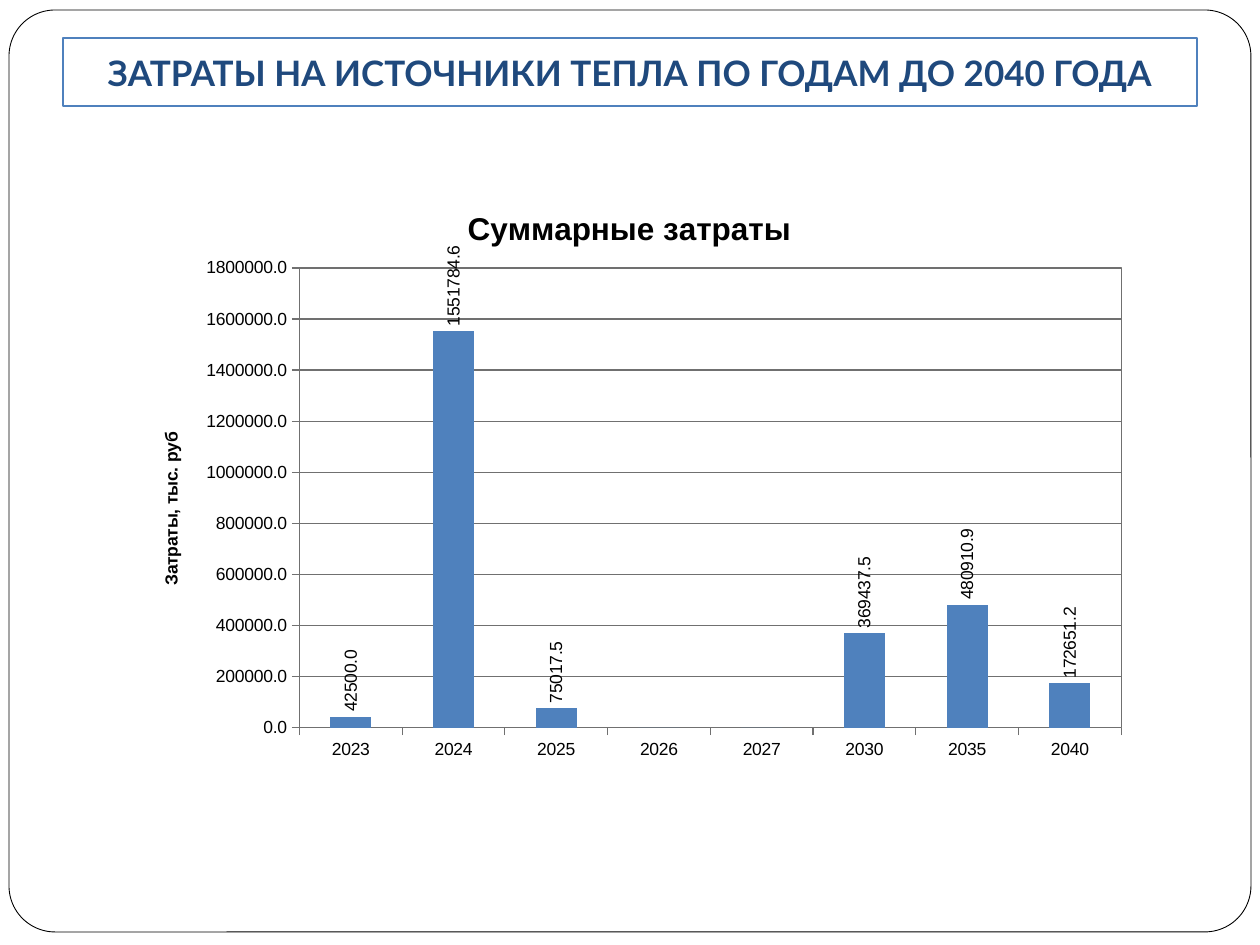
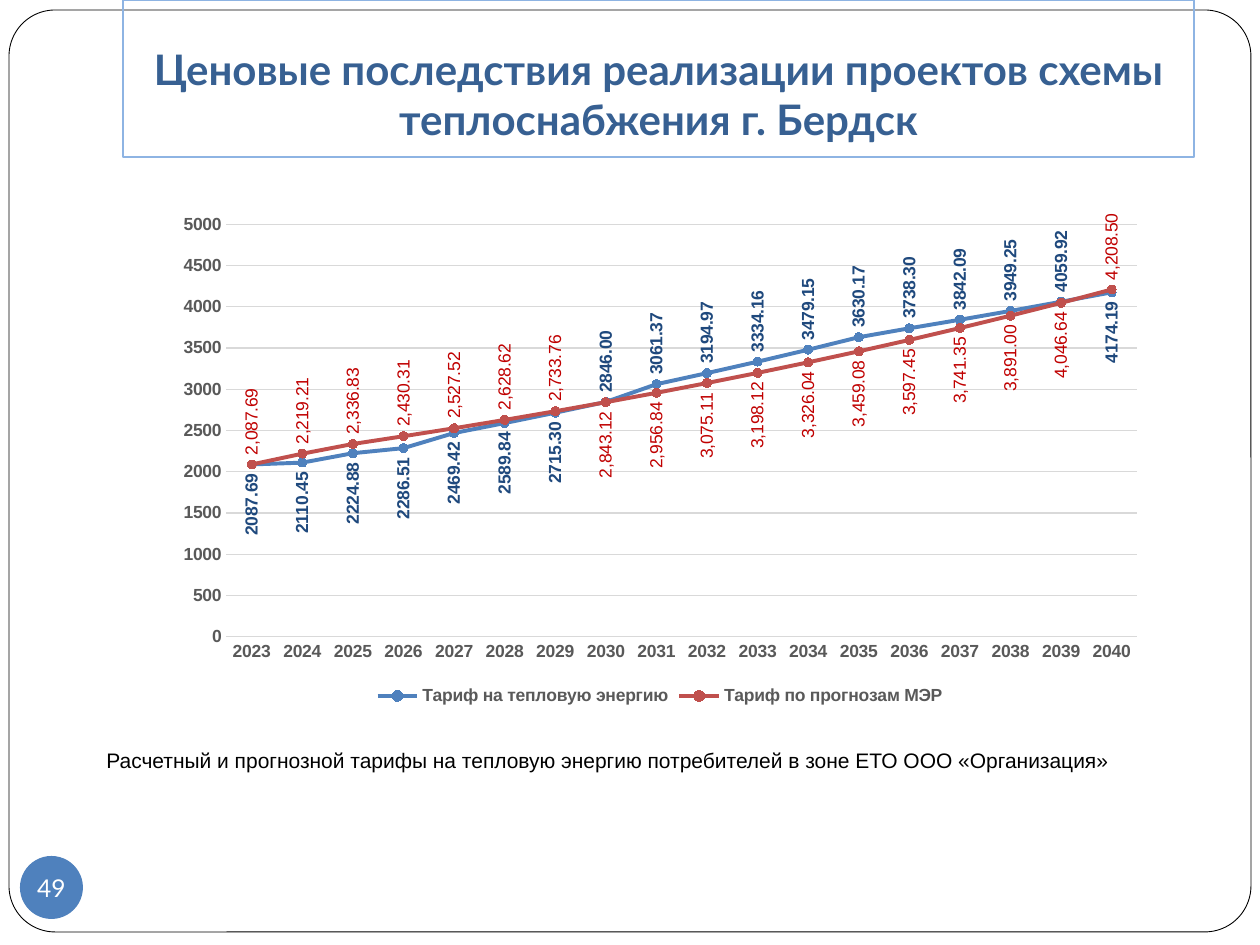
from pptx import Presentation, util as u
from pptx.chart.data import CategoryChartData
from pptx.dml.color import RGBColor
from pptx.enum import chart as ch, shapes, text
from pptx.oxml import parse_xml, ns

SCALE = 914400 / 126
HEX = {
    "white": "FFFFFF", "black": "000000", "blue": "4F81BD", "red": "C0504D",
    "navy": "1F497D", "steel": "376092", "sky": "8EB4E3", "crimson": "C00000",
    "text": "595959", "pale": "D9D9D9", "grey": "707070",
}
COSTS = {
    "2023": 42500.0, "2024": 1551784.6, "2025": 75017.5, "2026": 0,
    "2027": 0, "2030": 369437.5, "2035": 480910.9, "2040": 172651.2,
}
RATES = [
    2087.69, 2110.45, 2224.88, 2286.51, 2469.42, 2589.84, 2715.30, 2846.00, 3061.37,
    3194.97, 3334.16, 3479.15, 3630.17, 3738.30, 3842.09, 3949.25, 4059.92, 4174.19,
]
PLANS = [
    2087.69, 2219.21, 2336.83, 2430.31, 2527.52, 2628.62, 2733.76, 2843.12, 2956.84,
    3075.11, 3198.12, 3326.04, 3459.08, 3597.45, 3741.35, 3891.00, 4046.64, 4208.50,
]
SWAPPED = [*range(7), 17]


def px(*vals):
    """Turn pixel lengths into EMU."""
    return [round(v * SCALE) for v in vals]


def rgb(key):
    """Look up a colour by name."""
    return RGBColor.from_string(HEX[key])


def style(font, size, color="black", bold=False, name="Arial"):
    """Set a font's face, size, weight and colour."""
    font.name, font.size, font.bold = name, u.Pt(size), bold
    font.color.rgb = rgb(color)


def stroke(line, color, width=0.75):
    """Set a line's colour and width in points."""
    line.color.rgb = rgb(color)
    line.width = u.Pt(width)


def solid(shape, color):
    """Fill a shape with one colour and drop its shadow."""
    shape.shadow.inherit = False
    shape.fill.solid()
    shape.fill.fore_color.rgb = rgb(color)


def add_slide(deck, words, box, size, color, edge):
    """Add a framed slide with an outlined title."""
    slide = deck.slides.add_slide(deck.slide_layouts[5])
    frame = slide.shapes.add_shape(shapes.MSO_SHAPE.ROUNDED_RECTANGLE, *px(9, 10, 1242, 922))
    frame.adjustments[0] = 0.05
    solid(frame, "white")
    stroke(frame.line, "black", 0.5)
    slide.shapes.element.insert(2, frame.element)
    title = slide.shapes.title
    title.left, title.top, title.width, title.height = px(*box)
    stroke(title.line, edge)
    body = title.text_frame
    body.text = words
    body.auto_size = text.MSO_AUTO_SIZE.NONE
    body.vertical_anchor = text.MSO_ANCHOR.BOTTOM
    body.margin_bottom = u.Inches(0.1)
    para = body.paragraphs[0]
    para.alignment = text.PP_ALIGN.CENTER
    style(para.font, size, color, True, "Lato")
    return slide


def add_chart(slide, kind, box, cats, rows, area):
    """Add a chart whose inner plot area is given as fractions."""
    data = CategoryChartData()
    data.categories = cats
    for name, vals, code in rows:
        data.add_series(name, vals, code)
    chart = slide.shapes.add_chart(kind, *px(*box), data).chart
    chart.has_title = chart.has_legend = False
    style(chart.font, 10)
    chart.plots[0].vary_by_categories = False
    plot = chart.element.chart.plotArea
    for old in plot.findall(ns.qn("c:layout")):
        plot.remove(old)
    parts = "".join(f'<c:{k} val="{v}"/>' for k, v in zip("xywh", area))
    plot.insert(0, parse_xml(
        f'<c:layout {ns.nsdecls("c")}><c:manualLayout><c:layoutTarget val="inner"/>'
        f'<c:xMode val="edge"/><c:yMode val="edge"/>{parts}</c:manualLayout></c:layout>'))
    return chart


def set_axes(chart, tick, grid, code, color="black", bold=False):
    """Format both axes and the gridlines."""
    for axis in (chart.category_axis, chart.value_axis):
        axis.major_tick_mark = tick
        axis.minor_tick_mark = ch.XL_TICK_MARK.NONE
        style(axis.tick_labels.font, 10, color, bold)
        stroke(axis.format.line, grid)
    axis.has_major_gridlines = True
    stroke(axis.major_gridlines.format.line, grid)
    axis.tick_labels.number_format = code
    axis.tick_labels.number_format_is_linked = False


def set_labels(row, code, spot, color="black", bold=False):
    """Show the values of a series."""
    tags = row.data_labels
    tags.show_value = True
    tags.number_format, tags.number_format_is_linked = code, False
    tags.position = spot
    style(tags.font, 10, color, bold)


def turn_labels(chart):
    """Turn all value labels to read upwards."""
    for body in chart.element.xpath(".//c:dLbls//a:bodyPr"):
        body.set("rot", "-5400000")
        body.set("vert", "horz")


def add_costs(slide):
    """Add the column chart of yearly costs."""
    code = "0.0;;"
    chart = add_chart(slide, ch.XL_CHART_TYPE.COLUMN_CLUSTERED, (137, 184, 985, 576),
                      list(COSTS), [("Затраты", COSTS.values(), code)],
                      (0.165, 0.146, 0.835, 0.798))
    set_axes(chart, ch.XL_TICK_MARK.OUTSIDE, "grey", "0.0")
    axis = chart.value_axis
    for owner, words, size in ((chart, "Суммарные затраты", 18), (axis, "Затраты, тыс. руб", 10)):
        owner.has_title = True
        head = owner.chart_title if owner is chart else owner.axis_title
        head.text_frame.text = words
        style(head.text_frame.paragraphs[0].font, size, bold=True)
    plot = chart.plots[0]
    plot.gap_width = 150
    row = plot.series[0]
    row.format.fill.solid()
    row.format.fill.fore_color.rgb = rgb("blue")
    set_labels(row, code, ch.XL_LABEL_POSITION.OUTSIDE_END)
    turn_labels(chart)
    chart.element.chart.plotArea.append(parse_xml(
        f'<c:spPr {ns.nsdecls("c", "a")}><a:noFill/><a:ln w="9525"><a:solidFill>'
        f'<a:srgbClr val="{HEX["grey"]}"/></a:solidFill></a:ln></c:spPr>'))


def add_rates(slide):
    """Add the line chart of heat tariffs."""
    codes = "0.00", "#,##0.00"
    chart = add_chart(slide, ch.XL_CHART_TYPE.LINE_MARKERS, (164, 204, 992, 507),
                      [str(y) for y in range(2023, 2041)],
                      [("Тариф на тепловую энергию", RATES, codes[0]),
                       ("Тариф по прогнозам МЭР", PLANS, codes[1])],
                      (0.063, 0.04, 0.918, 0.814))
    set_axes(chart, ch.XL_TICK_MARK.NONE, "pale", "General", "text", True)
    axis = chart.value_axis
    axis.minimum_scale, axis.maximum_scale, axis.major_unit = 0, 5000, 500
    axis.format.line.fill.background()
    chart.has_legend = True
    chart.legend.position = ch.XL_LEGEND_POSITION.BOTTOM
    chart.legend.include_in_layout = False
    style(chart.legend.font, 10, "text", True)
    up, down = ch.XL_LABEL_POSITION.ABOVE, ch.XL_LABEL_POSITION.BELOW
    looks = (("blue", "navy", True, up, down), ("red", "crimson", False, down, up))
    for row, code, (color, ink, bold, spot, other) in zip(chart.plots[0].series, codes, looks):
        row.smooth = False
        stroke(row.format.line, color, 2.25)
        mark = row.marker
        mark.style, mark.size = ch.XL_MARKER_STYLE.CIRCLE, 5
        mark.format.fill.solid()
        mark.format.fill.fore_color.rgb = rgb(color)
        stroke(mark.format.line, color)
        set_labels(row, code, spot, ink, bold)
        for i in SWAPPED:
            tag = row.points[i].data_label
            style(tag.font, 10, ink, bold)
            tag.position = other
    turn_labels(chart)


def add_note(slide, words):
    """Add the caption under the chart."""
    body = slide.shapes.add_textbox(*px(94, 741, 1196, 38)).text_frame
    body.word_wrap = True
    body.text = words
    style(body.paragraphs[0].font, 12)


def add_badge(slide, number):
    """Add the round page number."""
    disc = slide.shapes.add_shape(shapes.MSO_SHAPE.OVAL, *px(20, 856, 63, 63))
    solid(disc, "blue")
    disc.line.fill.background()
    body = disc.text_frame
    body.margin_left = body.margin_right = body.margin_top = body.margin_bottom = 0
    body.word_wrap = False
    body.vertical_anchor = text.MSO_ANCHOR.MIDDLE
    body.text = number
    para = body.paragraphs[0]
    para.alignment = text.PP_ALIGN.CENTER
    style(para.font, 14, "white", name="Lato")


def main():
    """Build and save both slides."""
    deck = Presentation()
    deck.slide_width, deck.slide_height = px(1260, 945)
    costs = add_slide(deck, "ЗАТРАТЫ НА ИСТОЧНИКИ ТЕПЛА ПО ГОДАМ ДО 2040 ГОДА",
                      (63, 38, 1134, 68), 20, "navy", "blue")
    add_costs(costs)
    rates = add_slide(deck, "Ценовые последствия реализации проектов схемы теплоснабжения г. Бердск",
                      (123, 0, 1071, 157), 24, "steel", "sky")
    add_note(rates, "Расчетный и прогнозной тарифы на тепловую энергию потребителей "
                    "в зоне ЕТО ООО «Организация»")
    add_badge(rates, "49")
    add_rates(rates)
    deck.save("out.pptx")


if __name__ == "__main__":
    main()
